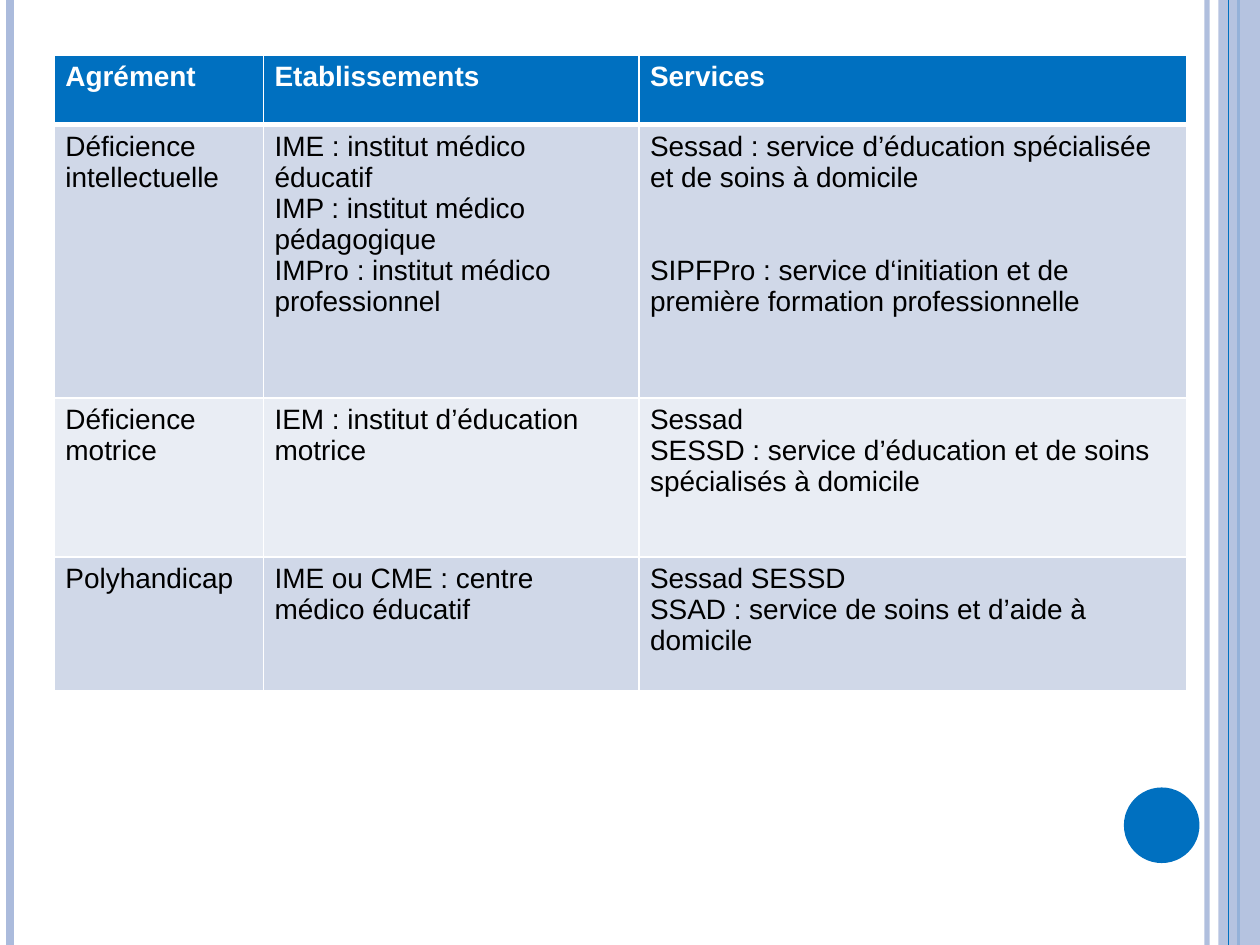
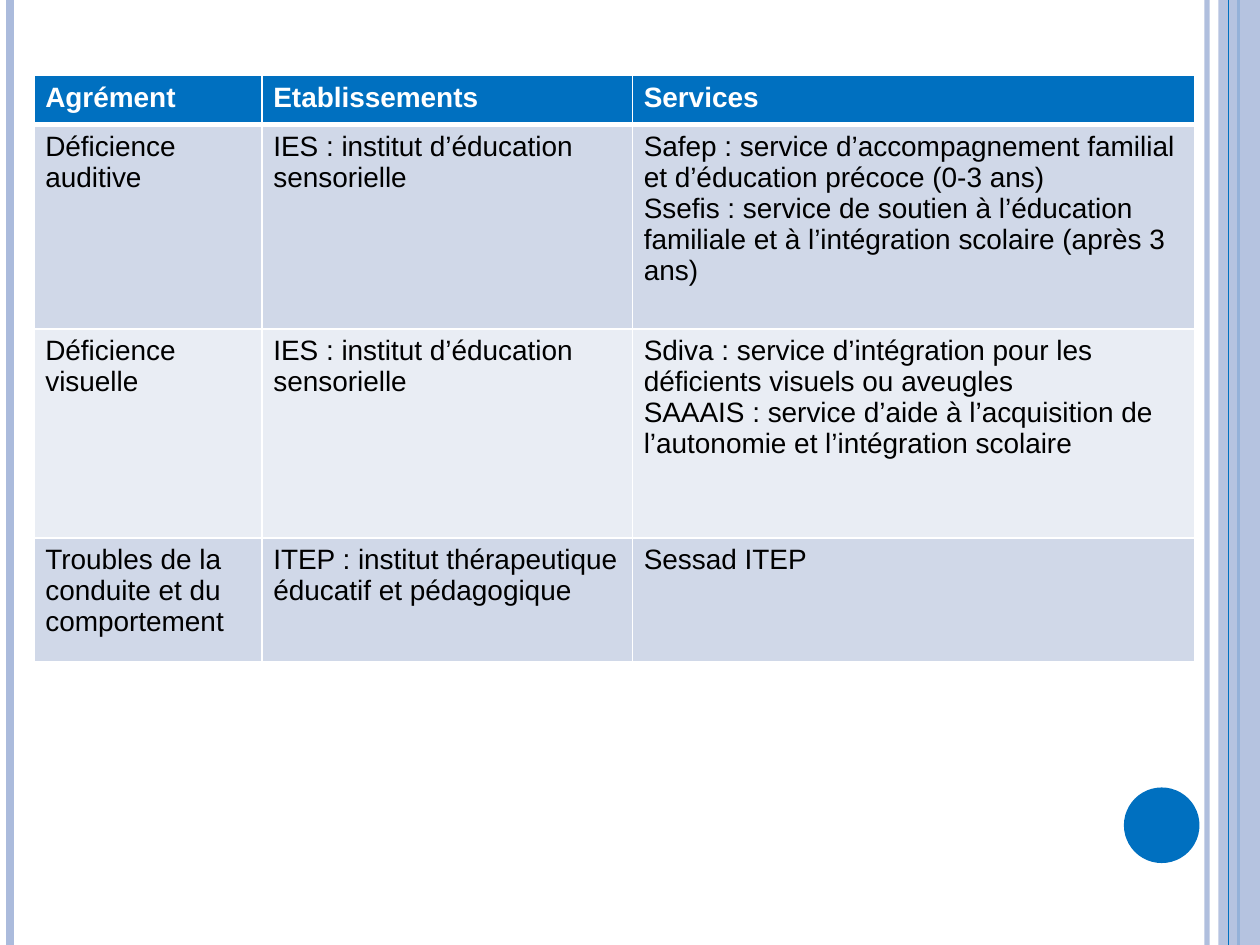
from lxml import etree
from pptx import Presentation
from pptx.dml.color import RGBColor
from pptx.enum.shapes import MSO_CONNECTOR, MSO_SHAPE
from pptx.oxml.ns import qn
from pptx.util import Inches, Pt

COLORS = {
    "accent": "0070C0",
    "band": "ABBBDC",
    "white": "FFFFFF",
    "black": "000000",
    "row_dark": "D0D8E8",
    "row_light": "E9EDF4",
}
FONT = "Arial"
SLIDE_WIDTH, SLIDE_HEIGHT = 10, 7.5
SERVICE_GAP = 35.4  # points, two lines of 16 pt text

HEADINGS = ["Agrément", "Etablissements", "Services"]

# A cell is a list of paragraphs; a pair holds a text and the space before it.
INTELLECTUAL_AND_MOTOR = [
    [["Déficience intellectuelle"],
     ["IME : institut médico éducatif",
      "IMP : institut médico pédagogique",
      "IMPro : institut médico professionnel"],
     ["Sessad : service d’éducation spécialisée et de soins à domicile",
      ("SIPFPro : service d‘initiation et de première formation professionnelle",
       SERVICE_GAP)]],
    [["Déficience motrice"],
     ["IEM : institut d’éducation motrice"],
     ["Sessad",
      "SESSD : service d’éducation et de soins spécialisés à domicile"]],
    [["Polyhandicap"],
     ["IME ou CME : centre médico éducatif"],
     ["Sessad SESSD",
      "SSAD : service de soins et d’aide à domicile"]],
]
SENSORY_AND_BEHAVIOUR = [
    [["Déficience auditive"],
     ["IES : institut d’éducation sensorielle"],
     ["Safep : service d’accompagnement familial et d’éducation précoce (0-3 ans)",
      "Ssefis : service de soutien à l’éducation familiale et à l’intégration "
      "scolaire (après 3 ans)"]],
    [["Déficience visuelle"],
     ["IES : institut d’éducation sensorielle"],
     ["Sdiva : service d’intégration pour les déficients visuels ou aveugles",
      "SAAAIS : service d’aide à l’acquisition de l’autonomie et l’intégration "
      "scolaire"]],
    [["Troubles de la conduite et du comportement"],
     ["ITEP : institut thérapeutique éducatif et pédagogique"],
     ["Sessad ITEP"]],
]


def rgb(color):
    return RGBColor.from_string(COLORS[color])


def set_opacity(element, percent):
    """Give the first colour inside the element an opacity."""
    color = element.find(".//" + qn("a:srgbClr"))
    etree.SubElement(color, qn("a:alpha"), val=str(percent * 1000))


def add_vertical_rule(slide, x, color, width, opacity=100):
    rule = slide.shapes.add_connector(
        MSO_CONNECTOR.STRAIGHT, Inches(x), 0, Inches(x), Inches(SLIDE_HEIGHT))
    rule.line.color.rgb = rgb(color)
    rule.line.width = Pt(width)
    properties = rule._element.spPr
    if opacity < 100:
        set_opacity(properties, opacity)
    etree.SubElement(properties, qn("a:effectLst"))


def add_plain_shape(slide, kind, left, top, width, height, color, opacity=100):
    shape = slide.shapes.add_shape(
        kind, Inches(left), Inches(top), Inches(width), Inches(height))
    shape.shadow.inherit = False
    shape.fill.solid()
    shape.fill.fore_color.rgb = rgb(color)
    shape.line.fill.background()
    if opacity < 100:
        set_opacity(shape._element.spPr, opacity)


def add_frame(slide):
    """Draw the side rules, the right band and the disc found on every slide."""
    add_vertical_rule(slide, 9.58, "band", 3, opacity=93)
    add_vertical_rule(slide, 0.08, "band", 4.5)
    add_vertical_rule(slide, 9.83, "accent", 1.5)
    add_plain_shape(slide, MSO_SHAPE.RECTANGLE, 9.67, 0, SLIDE_WIDTH - 9.67,
                    SLIDE_HEIGHT, "band", opacity=87)
    add_vertical_rule(slide, 9.75, "accent", 0.75)
    add_plain_shape(slide, MSO_SHAPE.OVAL, 8.92, 6.25, 0.6, 0.6, "accent")


def write_paragraph(paragraph, text, size=16, color="black", bold=False,
                    space_before=0):
    paragraph.space_before = Pt(space_before)
    run = paragraph.add_run()
    run.text = text
    run.font.name = FONT
    run.font.size = Pt(size)
    run.font.bold = bold
    run.font.color.rgb = rgb(color)


def set_borders(cell, top=1, bottom=1):
    properties = cell._tc.get_or_add_tcPr()
    for side, width in (("L", 1), ("R", 1), ("T", top), ("B", bottom)):
        border = etree.SubElement(properties, qn(f"a:ln{side}"), w=str(Pt(width)))
        fill = etree.SubElement(border, qn("a:solidFill"))
        etree.SubElement(fill, qn("a:srgbClr"), val=COLORS["white"])


def fill_cell(cell, paragraphs, fill, borders, **text_format):
    cell.margin_left = cell.margin_right = Inches(0.09)
    cell.margin_top = cell.margin_bottom = Inches(0.05)
    set_borders(cell, **borders)
    cell.fill.solid()
    cell.fill.fore_color.rgb = rgb(fill)
    frame = cell.text_frame
    for index, entry in enumerate(paragraphs):
        text, gap = entry if isinstance(entry, tuple) else (entry, 0)
        paragraph = frame.add_paragraph() if index else frame.paragraphs[0]
        write_paragraph(paragraph, text, space_before=gap, **text_format)


def add_approval_table(slide, left, top, column_widths, row_heights, rows):
    table = slide.shapes.add_table(
        len(row_heights), len(column_widths), Inches(left), Inches(top),
        Inches(sum(column_widths)), Inches(sum(row_heights))).table
    for column, width in zip(table.columns, column_widths):
        column.width = Inches(width)
    for row, height in zip(table.rows, row_heights):
        row.height = Inches(height)

    for column, heading in enumerate(HEADINGS):
        fill_cell(table.cell(0, column), [heading], "accent", {"bottom": 3},
                  color="white", bold=True)
    for row, cells in enumerate(rows, start=1):
        fill = "row_dark" if row % 2 else "row_light"
        borders = {"top": 3} if row == 1 else {}
        for column, paragraphs in enumerate(cells):
            fill_cell(table.cell(row, column), paragraphs, fill, borders)


def main():
    presentation = Presentation()
    presentation.slide_width = Inches(SLIDE_WIDTH)
    presentation.slide_height = Inches(SLIDE_HEIGHT)
    blank_layout = presentation.slide_layouts[6]

    tables = [
        (0.43, 0.44, [1.66, 2.98, 4.35], [0.55, 2.17, 1.26, 1.06],
         INTELLECTUAL_AND_MOTOR),
        (0.27, 0.6, [1.81, 2.94, 4.46], [0.39, 1.62, 1.66, 0.98],
         SENSORY_AND_BEHAVIOUR),
    ]
    for table in tables:
        slide = presentation.slides.add_slide(blank_layout)
        add_frame(slide)
        add_approval_table(slide, *table)

    presentation.save("out.pptx")


if __name__ == "__main__":
    main()
